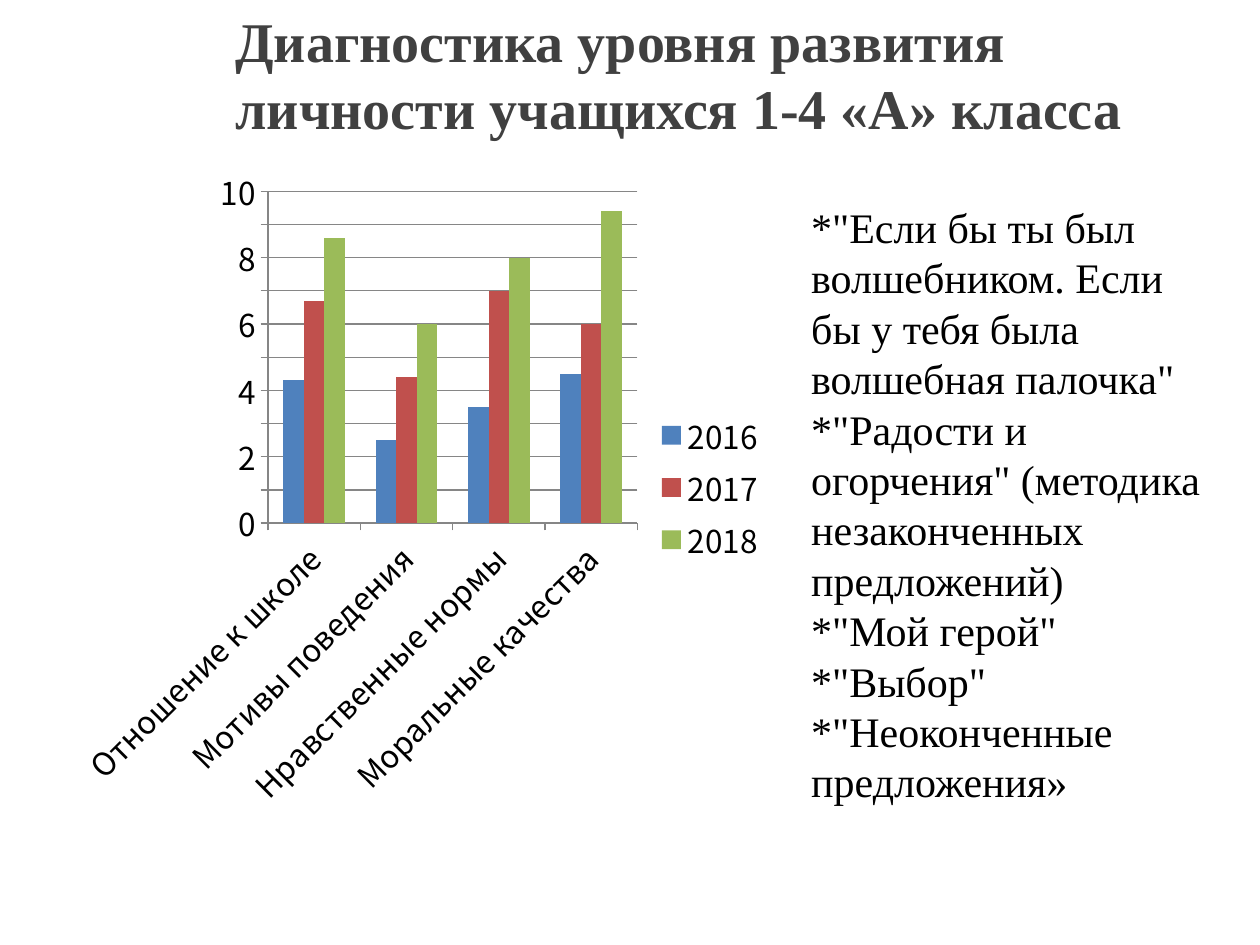
from pptx import Presentation
from pptx.chart.data import CategoryChartData
from pptx.dml.color import RGBColor
from pptx.enum.chart import XL_CHART_TYPE, XL_LEGEND_POSITION, XL_TICK_MARK
from pptx.enum.text import MSO_ANCHOR
from pptx.util import Inches, Pt

CLUSTERED = XL_CHART_TYPE.COLUMN_CLUSTERED
LEGEND_RIGHT = XL_LEGEND_POSITION.RIGHT
TICK_OUTSIDE = XL_TICK_MARK.OUTSIDE
MIDDLE = MSO_ANCHOR.MIDDLE
TOP = MSO_ANCHOR.TOP

TEXT_FONT = "Times New Roman"
CHART_FONT = "Noto Sans CJK KR"
BLACK = "000000"
DARK_GRAY = "404040"
LINE_GRAY = "868686"

TITLE = "Диагностика уровня развития личности учащихся 1-4 «А» класса"
METHODS = [
    '*"Если бы ты был волшебником. Если бы у тебя была волшебная палочка"',
    '*"Радости и огорчения" (методика незаконченных предложений)',
    '*"Мой герой"',
    '*"Выбор"',
    '*"Неоконченные',
    "предложения»",
]
CRITERIA = ["Отношение к школе", "Мотивы поведения",
            "Нравственные нормы", "Моральные качества"]
YEARS = [
    ("2016", [4.3, 2.5, 3.5, 4.5], "4F81BD"),
    ("2017", [6.7, 4.4, 7, 6], "C0504D"),
    ("2018", [8.6, 6, 8, 9.4], "9BBB59"),
]


def color(hex_code):
    return RGBColor.from_string(hex_code)


def style_font(font, name, size, hex_code, bold=False):
    font.name = name
    font.size = Pt(size)
    font.bold = bold
    font.color.rgb = color(hex_code)


def style_line(line):
    line.color.rgb = color(LINE_GRAY)
    line.width = Pt(0.75)


def add_text(slide, box, paragraphs, size, hex_code, bold=False, anchor=TOP):
    frame = slide.shapes.add_textbox(*map(Inches, box)).text_frame
    frame.word_wrap = True
    frame.vertical_anchor = anchor
    for index, content in enumerate(paragraphs):
        paragraph = frame.paragraphs[0] if index == 0 else frame.add_paragraph()
        run = paragraph.add_run()
        run.text = content
        style_font(run.font, TEXT_FONT, size, hex_code, bold)


def add_results_chart(slide, box):
    results = CategoryChartData()
    results.categories = CRITERIA
    for year, scores, _ in YEARS:
        results.add_series(year, scores)
    chart = slide.shapes.add_chart(CLUSTERED, *map(Inches, box), results).chart
    style_font(chart.font, CHART_FONT, 18, BLACK)
    chart.has_title = False
    chart.has_legend = True
    chart.legend.position = LEGEND_RIGHT
    chart.legend.include_in_layout = False

    plot = chart.plots[0]
    plot.gap_width = 150
    plot.vary_by_categories = False
    for series, (_, _, fill) in zip(plot.series, YEARS):
        series.format.fill.solid()
        series.format.fill.fore_color.rgb = color(fill)

    for axis in (chart.category_axis, chart.value_axis):
        axis.major_tick_mark = TICK_OUTSIDE
        style_line(axis.format.line)
    scale = chart.value_axis
    scale.minimum_scale, scale.maximum_scale, scale.major_unit = 0, 10, 1
    scale.has_major_gridlines = True
    style_line(scale.major_gridlines.format.line)


def main():
    presentation = Presentation()
    presentation.slide_width = Inches(10)
    presentation.slide_height = Inches(7.5)
    slide = presentation.slides.add_slide(presentation.slide_layouts[6])
    add_text(slide, (1.77, 0, 8.23, 1.17), [TITLE], 32, DARK_GRAY,
             bold=True, anchor=MIDDLE)
    add_results_chart(slide, (0.51, 1.23, 5.67, 5.28))
    add_text(slide, (6.34, 1.55, 3.46, 4.54), METHODS, 24, BLACK)
    presentation.save("out.pptx")


if __name__ == "__main__":
    main()
